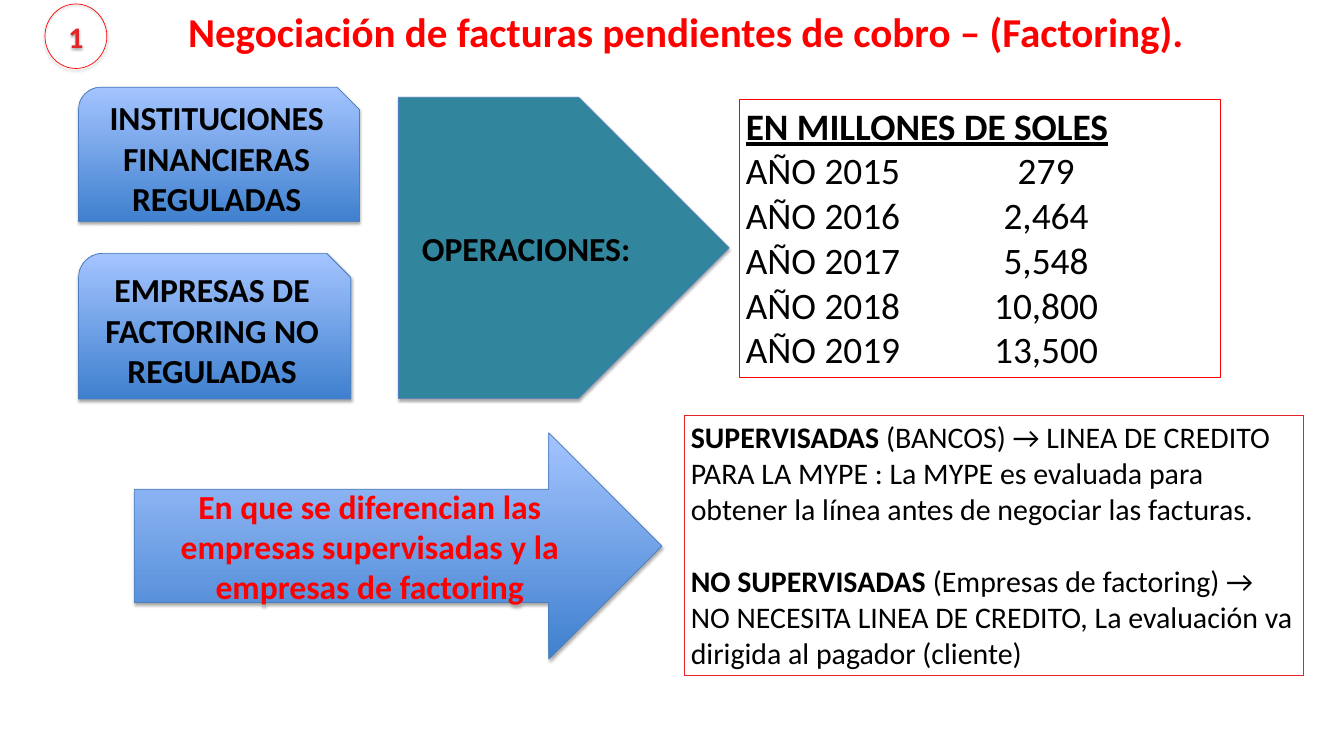
from lxml.etree import SubElement
from pptx import Presentation
from pptx.dml.color import RGBColor
from pptx.enum.shapes import MSO_SHAPE
from pptx.enum.text import MSO_ANCHOR, PP_ALIGN
from pptx.oxml.ns import qn
from pptx.util import Cm, Pt

COLORS = {
    "black": "000000",
    "red": "FF0000",
    "crimson": "E32326",
    "teal": "31859C",
    "edge": "4B7EBC",
    "deep": "3F80CE",
    "pale": "A4C4FF",
}
FONT = "Calibri"
OPERATIONS = [
    ("2015", "279"),
    ("2016", "2,464"),
    ("2017", "5,548"),
    ("2018", "10,800"),
    ("2019", "13,500"),
]
COMPARISON = [
    ("SUPERVISADAS", " (BANCOS) → LINEA DE CREDITO PARA LA MYPE : La MYPE es evaluada "
     "para obtener la línea antes de negociar las facturas."),
    ("NO SUPERVISADAS", " (Empresas de factoring) → NO NECESITA LINEA DE CREDITO, "
     "La evaluación va dirigida al pagador (cliente)"),
]


def rgb(name):
    return RGBColor.from_string(COLORS[name])


def style(p, size, color="black", bold=None, align=PP_ALIGN.LEFT):
    p.alignment = align
    p.font.name = FONT
    p.font.size = Pt(size)
    p.font.bold = bold
    p.font.color.rgb = rgb(color)


def add_shadow(sp):
    effects = sp._element.spPr.find(qn("a:effectLst"))
    shadow = SubElement(effects, qn("a:outerShdw"), blurRad=str(Pt(3.1)),
                        dist=str(Pt(1.8)), dir="5400000", rotWithShape="0")
    color = SubElement(shadow, qn("a:srgbClr"), val=COLORS["black"])
    SubElement(color, qn("a:alpha"), val="35000")


def paint(sp, fill):
    if fill is None:
        sp.fill.background()
    elif fill == "gradient":
        sp.fill.gradient()
        sp.fill.gradient_angle = 90
        for stop, name in zip(sp.fill.gradient_stops, ("deep", "pale")):
            stop.color.rgb = rgb(name)
    else:
        sp.fill.solid()
        sp.fill.fore_color.rgb = rgb(fill)


def add_box(s, kind, box, fill=None, line="edge", width=0.75):
    sp = s.shapes.add_shape(kind, *map(Cm, box))
    sp.shadow.inherit = False
    paint(sp, fill)
    sp.line.color.rgb = rgb(line)
    sp.line.width = Pt(width)
    sp.text_frame.word_wrap = True
    return sp


def add_label(s, kind, box, text, fill="gradient", line="edge", size=36, color="black"):
    sp = add_box(s, kind, box, fill, line)
    add_shadow(sp)
    tf = sp.text_frame
    tf.vertical_anchor = MSO_ANCHOR.MIDDLE
    p = tf.paragraphs[0]
    p.add_run().text = text
    style(p, size, color, True, PP_ALIGN.CENTER)


def add_title(s, text):
    sp = s.shapes.title
    sp.left, sp.top, sp.width, sp.height = map(Cm, (6.55, 0.1, 38.5, 2.13))
    tf = sp.text_frame
    tf.text = text
    tf.word_wrap = False
    style(tf.paragraphs[0], 44, "red", True, PP_ALIGN.RIGHT)


def add_operations(s, box):
    tf = add_box(s, MSO_SHAPE.RECTANGLE, box, line="red", width=1).text_frame
    tf.vertical_anchor = MSO_ANCHOR.TOP
    p = tf.paragraphs[0]
    p.add_run().text = "EN MILLONES DE SOLES"
    style(p, 40, bold=True)
    p.font.underline = True
    for year, amount in OPERATIONS:
        p = tf.add_paragraph()
        tabs = SubElement(p._p.get_or_add_pPr(), qn("a:tabLst"))
        SubElement(tabs, qn("a:tab"), pos=str(Cm(11.35)), algn="ctr")
        p.add_run().text = f"AÑO {year}\t{amount}"
        style(p, 40)


def add_comparison(s, box):
    tf = add_box(s, MSO_SHAPE.RECTANGLE, box, line="crimson").text_frame
    tf.vertical_anchor = MSO_ANCHOR.TOP
    for i, (name, detail) in enumerate(COMPARISON):
        p = tf.add_paragraph() if i else tf.paragraphs[0]
        if i:
            p.space_before = Pt(39)
        r = p.add_run()
        r.text = name
        r.font.bold = True
        p.add_run().text = detail
        style(p, 32)


def main():
    """Build the factoring slide and save it."""
    prs = Presentation()
    prs.slide_width, prs.slide_height = Cm(50.8), Cm(28.58)
    s = prs.slides.add_slide(prs.slide_layouts[5])
    add_title(s, "Negociación de facturas pendientes de cobro – (Factoring).")
    add_label(s, MSO_SHAPE.SNIP_ROUND_RECTANGLE, (2.97, 3.3, 10.62, 5.08),
              "INSTITUCIONES FINANCIERAS REGULADAS")
    add_label(s, MSO_SHAPE.SNIP_ROUND_RECTANGLE, (2.97, 9.58, 10.29, 5.51),
              "EMPRESAS DE FACTORING NO REGULADAS")
    add_label(s, MSO_SHAPE.PENTAGON, (15.06, 3.68, 12.5, 11.38), "OPERACIONES:", "teal")
    add_operations(s, (27.94, 3.76, 18.19, 10.52))
    add_label(s, MSO_SHAPE.RIGHT_ARROW, (5.08, 16.36, 19.94, 8.56),
              "En que se diferencian las empresas supervisadas y la empresas de factoring",
              color="red")
    add_comparison(s, (25.86, 15.72, 23.39, 9.83))
    add_label(s, MSO_SHAPE.OVAL, (1.7, 0.15, 2.34, 2.44), "1", None, "red", 32, "crimson")
    prs.save("out.pptx")


if __name__ == "__main__":
    main()
